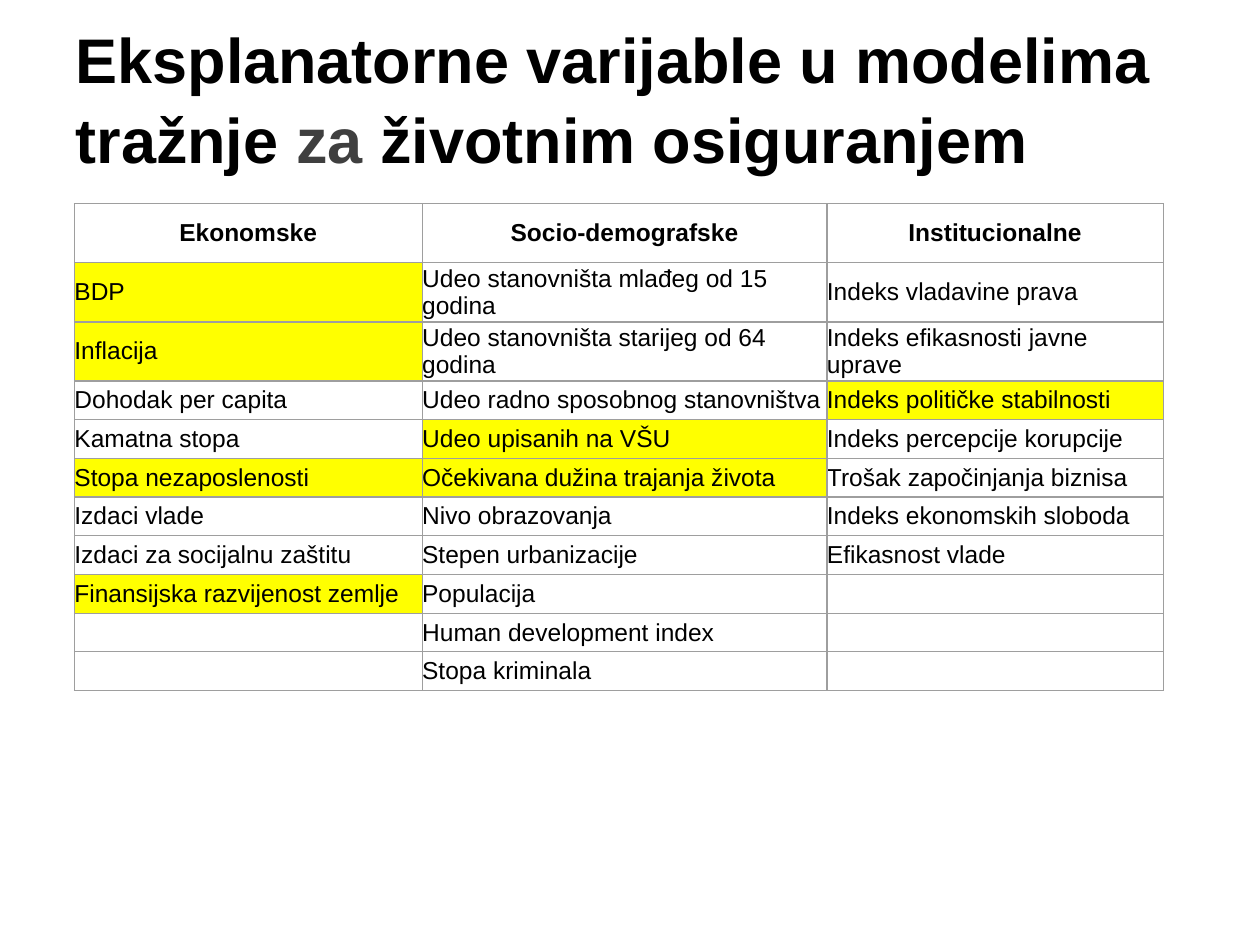
"""Build the slide listing explanatory variables in life insurance demand models."""
from lxml import etree
from pptx import Presentation
from pptx.dml.color import RGBColor
from pptx.enum.text import MSO_ANCHOR, MSO_AUTO_SIZE, PP_ALIGN
from pptx.oxml.ns import qn
from pptx.util import Cm, Pt

MIDDLE = MSO_ANCHOR.MIDDLE
NO_AUTOFIT = MSO_AUTO_SIZE.NONE
LEFT, CENTER = PP_ALIGN.LEFT, PP_ALIGN.CENTER
TITLE_ONLY = 5

THEME = {
    "font": "Arial",
    "title_size": Pt(36),
    "table_size": Pt(14),
    "text": RGBColor.from_string("000000"),
    "muted": RGBColor.from_string("3F3F3F"),
    "highlight": RGBColor.from_string("FFFF00"),
    "border": "9E9E9E",
    "border_width": Pt(0.75),
}

VARIABLES = {
    "Ekonomske": [
        "BDP", "Inflacija", "Dohodak per capita", "Kamatna stopa",
        "Stopa nezaposlenosti", "Izdaci vlade", "Izdaci za socijalnu zaštitu",
        "Finansijska razvijenost zemlje",
    ],
    "Socio-demografske": [
        "Udeo stanovništa mlađeg od 15 godina",
        "Udeo stanovništa starijeg od 64 godina",
        "Udeo radno sposobnog stanovništva", "Udeo upisanih na VŠU",
        "Očekivana dužina trajanja života", "Nivo obrazovanja",
        "Stepen urbanizacije", "Populacija", "Human development index",
        "Stopa kriminala",
    ],
    "Institucionalne": [
        "Indeks vladavine prava", "Indeks efikasnosti javne uprave",
        "Indeks političke stabilnosti", "Indeks percepcije korupcije",
        "Trošak započinjanja biznisa", "Indeks ekonomskih sloboda",
        "Efikasnost vlade",
    ],
}
HIGHLIGHTED = {
    "BDP", "Inflacija", "Stopa nezaposlenosti", "Finansijska razvijenost zemlje",
    "Udeo upisanih na VŠU", "Očekivana dužina trajanja života",
    "Indeks političke stabilnosti",
}
COLUMN_WIDTHS = [Cm(7.01), Cm(8.16), Cm(6.78)]
TALL_ROWS, TALL, SHORT = 3, Cm(1.19), Cm(0.78)


def set_font(font, size, bold):
    font.name = THEME["font"]
    font.size = size
    font.bold = bold
    font.color.rgb = THEME["text"]


def add_borders(cell):
    properties = cell._tc.get_or_add_tcPr()
    for side in ("a:lnL", "a:lnR", "a:lnT", "a:lnB"):
        line = etree.SubElement(properties, qn(side), w=str(THEME["border_width"]))
        fill = etree.SubElement(line, qn("a:solidFill"))
        etree.SubElement(fill, qn("a:srgbClr"), val=THEME["border"])


prs = Presentation()
prs.slide_width, prs.slide_height = Cm(25.4), Cm(19.05)
slide = prs.slides.add_slide(prs.slide_layouts[TITLE_ONLY])

title = slide.shapes.title
title.left, title.top, title.width, title.height = Cm(1.27), Cm(0.28), Cm(23.93), Cm(3.33)
title.text_frame.word_wrap = True
title.text_frame.auto_size = NO_AUTOFIT
title.text_frame.vertical_anchor = MIDDLE
heading = title.text_frame.paragraphs[0]
heading.alignment = LEFT
heading.line_spacing = 1.05
set_font(heading.font, THEME["title_size"], True)
for words, color in (
    ("Eksplanatorne varijable u modelima tražnje ", THEME["text"]),
    ("za ", THEME["muted"]),
    ("životnim osiguranjem", THEME["text"]),
):
    run = heading.add_run()
    run.text = words
    run.font.color.rgb = color

row_count = 1 + max(len(names) for names in VARIABLES.values())
row_heights = [TALL if row < TALL_ROWS else SHORT for row in range(row_count)]
variables = slide.shapes.add_table(
    row_count, len(VARIABLES), Cm(1.5), Cm(4.11), sum(COLUMN_WIDTHS), sum(row_heights)
).table
variables.first_row = variables.horz_banding = False
for row, height in zip(variables.rows, row_heights):
    row.height = height

for column, (group, names) in enumerate(VARIABLES.items()):
    variables.columns[column].width = COLUMN_WIDTHS[column]
    entries = [group] + names
    entries += [""] * (row_count - len(entries))
    for row, entry in enumerate(entries):
        cell = variables.cell(row, column)
        cell.margin_left = cell.margin_right = cell.margin_top = cell.margin_bottom = 0
        cell.vertical_anchor = MIDDLE
        add_borders(cell)
        if entry in HIGHLIGHTED:
            cell.fill.solid()
            cell.fill.fore_color.rgb = THEME["highlight"]
        else:
            cell.fill.background()
        cell.text = entry
        label = cell.text_frame.paragraphs[0]
        label.alignment = CENTER if row == 0 else LEFT
        set_font(label.font, THEME["table_size"], row == 0)

prs.save("out.pptx")
